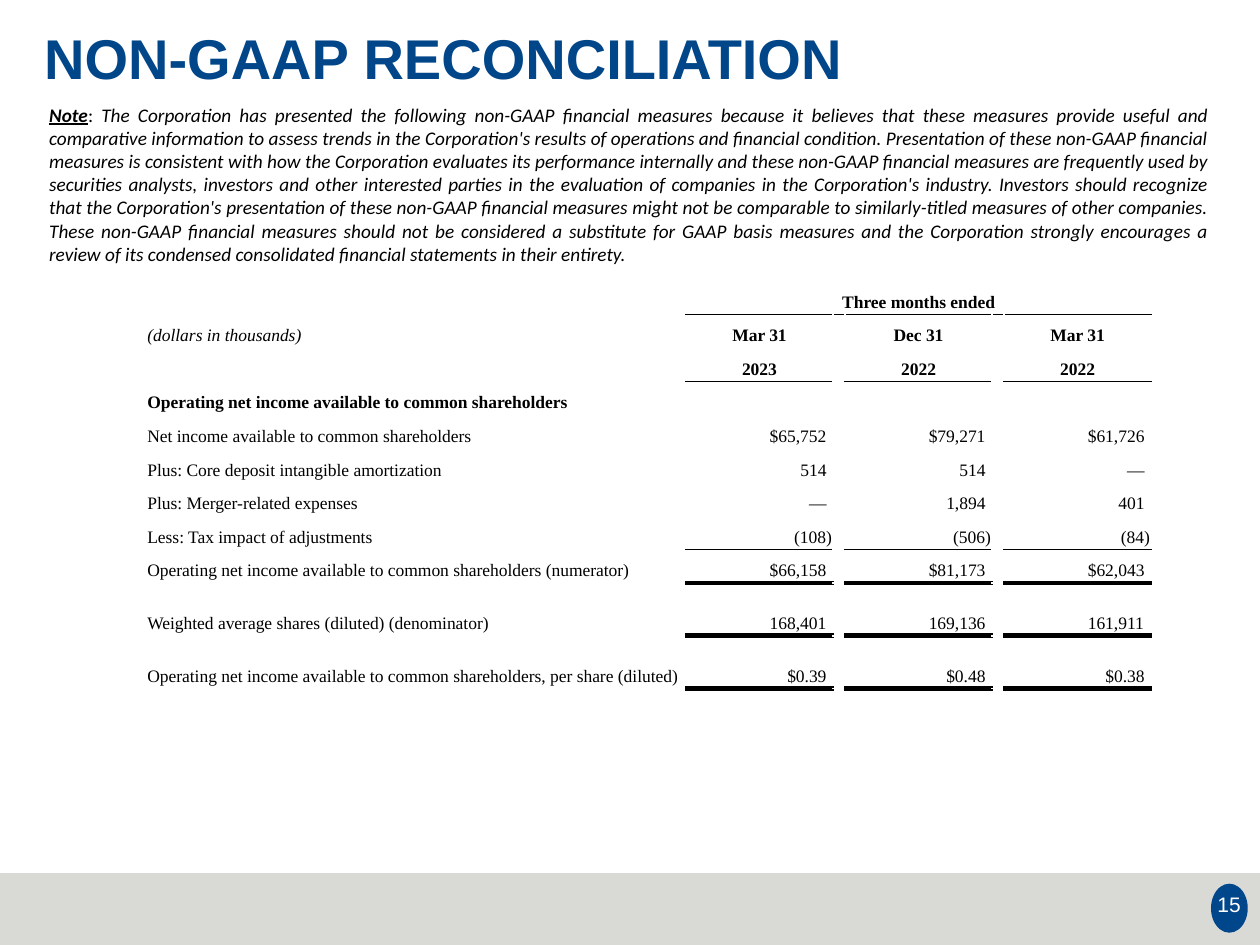
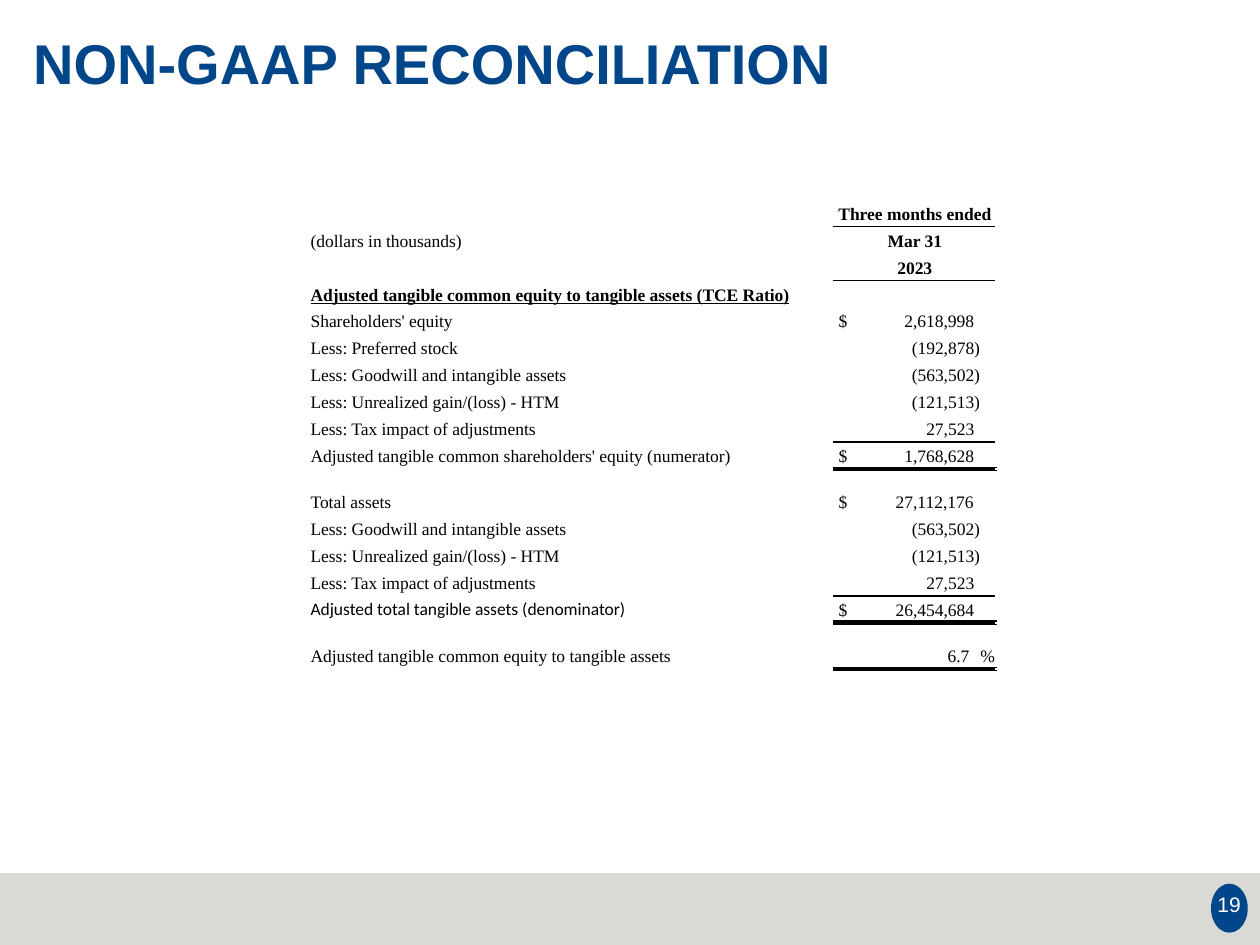
from lxml.etree import SubElement
from pptx import Presentation
from pptx.dml.color import RGBColor
from pptx.enum.shapes import MSO_SHAPE as SHAPE
from pptx.enum.text import MSO_ANCHOR as ANCHOR, MSO_AUTO_SIZE as AUTO, PP_ALIGN as ALIGN
from pptx.oxml.ns import qn
from pptx.util import Pt

TITLE_BLUE = RGBColor(0x00, 0x46, 0x89)
BADGE_BLUE = RGBColor(0x00, 0x46, 0x8B)
BAND_GREY = RGBColor(0xD9, 0xD9, 0xD6)
BLACK = RGBColor(0, 0, 0)
WHITE = RGBColor(0xFF, 0xFF, 0xFF)

SANS, NOTE_FONT, TABLE_FONT = "Arial", "Calibri", "Times New Roman"
THIN, THICK = 1, 3
DIGITS_END = 77.6  # where the last digit of every amount stops, in points
GLYPH_WIDTHS = {",": 2.5, ".": 2.5, "(": 3.33, ")": 3.33, "—": 10}

TITLE = "NON-GAAP RECONCILIATION"
NOTE_SENTENCES = [
    "The Corporation has presented the following non-GAAP financial measures because it believes "
    "that these measures provide useful and comparative information to assess trends in the "
    "Corporation's results of operations and financial condition.",
    "Presentation of these non-GAAP financial measures is consistent with how the Corporation "
    "evaluates its performance internally and these non-GAAP financial measures are frequently used "
    "by securities analysts, investors and other interested parties in the evaluation of companies "
    "in the Corporation's industry.",
    "Investors should recognize that the Corporation's presentation of these non-GAAP financial "
    "measures might not be comparable to similarly-titled measures of other companies.",
    "These non-GAAP financial measures should not be considered a substitute for GAAP basis measures "
    "and the Corporation strongly encourages a review of its condensed consolidated financial "
    "statements in their entirety.",
]

GAP, BLANK = ("gap",), ("",)
INCOME_ROWS = [
    ("", "Three months ended"),
    ("(dollars in thousands)", "Mar 31", "Dec 31", "Mar 31"),
    ("", "2023", "2022", "2022"),
    ("Operating net income available to common shareholders",),
    ("Net income available to common shareholders", "$65,752", "$79,271", "$61,726"),
    ("Plus: Core deposit intangible amortization", "514", "514", "—"),
    ("Plus: Merger-related expenses", "—", "1,894", "401"),
    ("Less: Tax impact of adjustments", "(108)", "(506)", "(84)"),
    ("Operating net income available to common shareholders (numerator)",
     "$66,158", "$81,173", "$62,043"),
    GAP,
    ("Weighted average shares (diluted) (denominator)", "168,401", "169,136", "161,911"),
    GAP,
    ("Operating net income available to common shareholders, per share (diluted)",
     "$0.39", "$0.48", "$0.38"),
    BLANK,
    BLANK,
]
SHARED_DEDUCTIONS = [
    ("Less: Goodwill and intangible assets", "(563,502)"),
    ("Less: Unrealized gain/(loss) - HTM", "(121,513)"),
    ("Less: Tax impact of adjustments", "27,523"),
]
EQUITY_ROWS = [
    BLANK,
    ("", "Three months ended"),
    ("(dollars in thousands)", "Mar 31"),
    ("", "2023"),
    ("Adjusted tangible common equity to tangible assets (TCE Ratio)",),
    ("Shareholders' equity", "$\t2,618,998"),
    ("Less: Preferred stock", "(192,878)"),
    *SHARED_DEDUCTIONS,
    ("Adjusted tangible common shareholders' equity (numerator)", "$\t1,768,628"),
    GAP,
    ("Total assets", "$\t27,112,176"),
    *SHARED_DEDUCTIONS,
    ("Adjusted total tangible assets (denominator)", "$\t26,454,684"),
    GAP,
    ("Adjusted tangible common equity to tangible assets", "6.7\t%"),
    BLANK,
]


def style_font(font, name, size, color, bold=False, italic=False, underline=False):
    font.name, font.size = name, Pt(size)
    font.bold, font.italic, font.underline = bold, italic, underline
    font.color.rgb = color


def set_margins(target, left, top, right, bottom):
    target.margin_left, target.margin_top = Pt(left), Pt(top)
    target.margin_right, target.margin_bottom = Pt(right), Pt(bottom)


def add_tabs(p, stops):
    tabs = SubElement(p._p.get_or_add_pPr(), qn("a:tabLst"))
    for stop in stops:
        SubElement(tabs, qn("a:tab"), pos=str(int(Pt(stop))), algn="l")


def set_borders(cell, top, bottom):
    """Draw white sides; top and bottom are rule widths, or 0 for a white line."""
    tc_pr = cell._tc.get_or_add_tcPr()
    for i, (side, rule) in enumerate([("L", 0), ("R", 0), ("T", top), ("B", bottom)]):
        ln = SubElement(tc_pr, qn(f"a:ln{side}"), w=str(int(Pt(rule or THIN))))
        fill = SubElement(ln, qn("a:solidFill"))
        SubElement(fill, qn("a:srgbClr"), val=str(BLACK if rule else WHITE))
        tc_pr.insert(i, ln)


def amount_layout(value, far_stop):
    """Return the tabbed text and tab stops that line an amount up on its last digit."""
    if value.endswith("%"):
        return "\t" + value, [0, 17.28]
    sign, _, number = value.rpartition("\t")
    width = sum(GLYPH_WIDTHS.get(ch, 5) for ch in number)
    end = DIGITS_END + (GLYPH_WIDTHS[")"] if number.endswith(")") else 0)
    if end > far_stop:
        return f"{sign}\t{number}", [end - width]
    return f"{sign}\t{number}\t", [end - width, far_stop]


class Deck:
    def __init__(self):
        self.prs = Presentation()
        self.prs.slide_width, self.prs.slide_height = Pt(720), Pt(540)
        self.s = None

    def shape(self, kind, x, y, w, h, color):
        sp = self.s.shapes.add_shape(kind, Pt(x), Pt(y), Pt(w), Pt(h))
        sp.shadow.inherit = False
        sp.fill.solid()
        sp.fill.fore_color.rgb = color
        sp.line.fill.background()

    def frame(self, sp, anchor=ANCHOR.TOP):
        tf = sp.text_frame
        tf.word_wrap, tf.auto_size, tf.vertical_anchor = True, AUTO.NONE, anchor
        set_margins(tf, 7.2, 4.3, 7.2, 7.2)
        return tf

    def text_box(self, x, y, w, h, anchor=ANCHOR.TOP):
        return self.frame(self.s.shapes.add_textbox(Pt(x), Pt(y), Pt(w), Pt(h)), anchor)

    def slide(self, page, title_x, title_y):
        self.s = self.prs.slides.add_slide(self.prs.slide_layouts[5])
        self.shape(SHAPE.RECTANGLE, 0, 499, 720, 41, BAND_GREY)
        self.shape(SHAPE.OVAL, 692, 505, 21, 28, BADGE_BLUE)
        p = self.text_box(685.4, 504, 34, 28, ANCHOR.MIDDLE).paragraphs[0]
        p.text, p.alignment = str(page), ALIGN.CENTER
        style_font(p.font, SANS, 12, WHITE)

        sp = self.s.shapes.title
        sp.left, sp.top, sp.width, sp.height = Pt(title_x), Pt(title_y), Pt(696), Pt(82)
        p = self.frame(sp).paragraphs[0]
        p.text, p.alignment, p.line_spacing = TITLE, ALIGN.LEFT, 0.9
        style_font(p.font, SANS, 32, TITLE_BLUE, bold=True)

    def note(self, x, y, w, h, text):
        p = self.text_box(x, y, w, h).paragraphs[0]
        p.alignment = ALIGN.JUSTIFY
        for words, lead, italic in [("Note", True, True), (": ", False, False), (text, False, True)]:
            r = p.add_run()
            r.text = words
            style_font(r.font, NOTE_FONT, 11, BLACK, lead, italic, lead)

    def cell_text(self, cell, text, align, stops=(), **look):
        p = cell.text_frame.paragraphs[0]
        p.text, p.alignment = text, align
        if stops:
            add_tabs(p, stops)
        style_font(p.font, **{"name": TABLE_FONT, "size": 10, "color": BLACK, **look})

    def statement(self, x, y, widths, row_height, rows, header_rows, rules, looks, far_stop):
        """Add a financial table; rules maps a row to the line under its amounts."""
        heights = [11 if row == GAP else row_height for row in rows]
        table = self.s.shapes.add_table(len(rows), len(widths), Pt(x), Pt(y),
                                        Pt(sum(widths)), Pt(sum(heights))).table
        table.first_row = table.horz_banding = False
        for column, width in zip(table.columns, widths):
            column.width = Pt(width)
        for row, height in zip(table.rows, heights):
            row.height = Pt(height)

        amount_cols = range(1, len(widths), 2)
        spanning = {i for i, row in enumerate(rows) if len(row) == 2 and len(amount_cols) > 1}

        def rule_under(i, c):
            ruled = c in amount_cols or (i in spanning and c > 0)
            return rules.get(i, 0) if ruled else 0

        for i, (label, *values) in enumerate(rows):
            texts = dict(zip(amount_cols, values))
            if label and rows[i] != GAP:
                texts[0] = label
            for c in range(len(widths)):
                cell = table.cell(i, c)
                cell.fill.background()
                cell.vertical_anchor = ANCHOR.BOTTOM
                set_borders(cell, rule_under(i - 1, c), rule_under(i, c))
                text = texts.get(c)
                if text is None:
                    set_margins(cell, 0, 0, 0, 0)
                    end = cell.text_frame.paragraphs[0]._p.get_or_add_endParaRPr()
                    end.set("sz", "900")
                elif c and i >= header_rows:
                    set_margins(cell, 0, 0, 0.7, 1.4)
                    text, stops = amount_layout(text, far_stop)
                    self.cell_text(cell, text, ALIGN.RIGHT, stops)
                else:
                    set_margins(cell, 2, 0, 2, 1.4)
                    if c:
                        self.cell_text(cell, text, ALIGN.CENTER, bold=True)
                    else:
                        self.cell_text(cell, text, ALIGN.LEFT, **looks.get(i, {}))
        for i in spanning:
            table.cell(i, 1).merge(table.cell(i, len(widths) - 1))


def main():
    deck = Deck()

    deck.slide(15, 18, 13.7)
    deck.note(21, 54.7, 677.5, 101, " ".join(NOTE_SENTENCES))
    deck.statement(82.2, 160.4, [309.8, 84, 6.9, 84, 6.9, 84], 19.2, INCOME_ROWS, header_rows=3,
                   rules={0: THIN, 2: THIN, 7: THIN, 8: THICK, 10: THICK, 12: THICK},
                   looks={1: {"italic": True}, 3: {"bold": True}}, far_stop=80.6)

    deck.slide(19, 11.7, 16.4)
    deck.statement(175.5, 98.6, [300.8, 92.9, 57.6], 15.4, EQUITY_ROWS, header_rows=4,
                   rules={1: THIN, 3: THIN, 9: THIN, 10: THICK, 15: THIN, 16: THICK, 18: THICK},
                   looks={4: {"bold": True, "underline": True}, 16: {"name": NOTE_FONT}},
                   far_stop=89.3)

    deck.prs.save("out.pptx")


if __name__ == "__main__":
    main()
